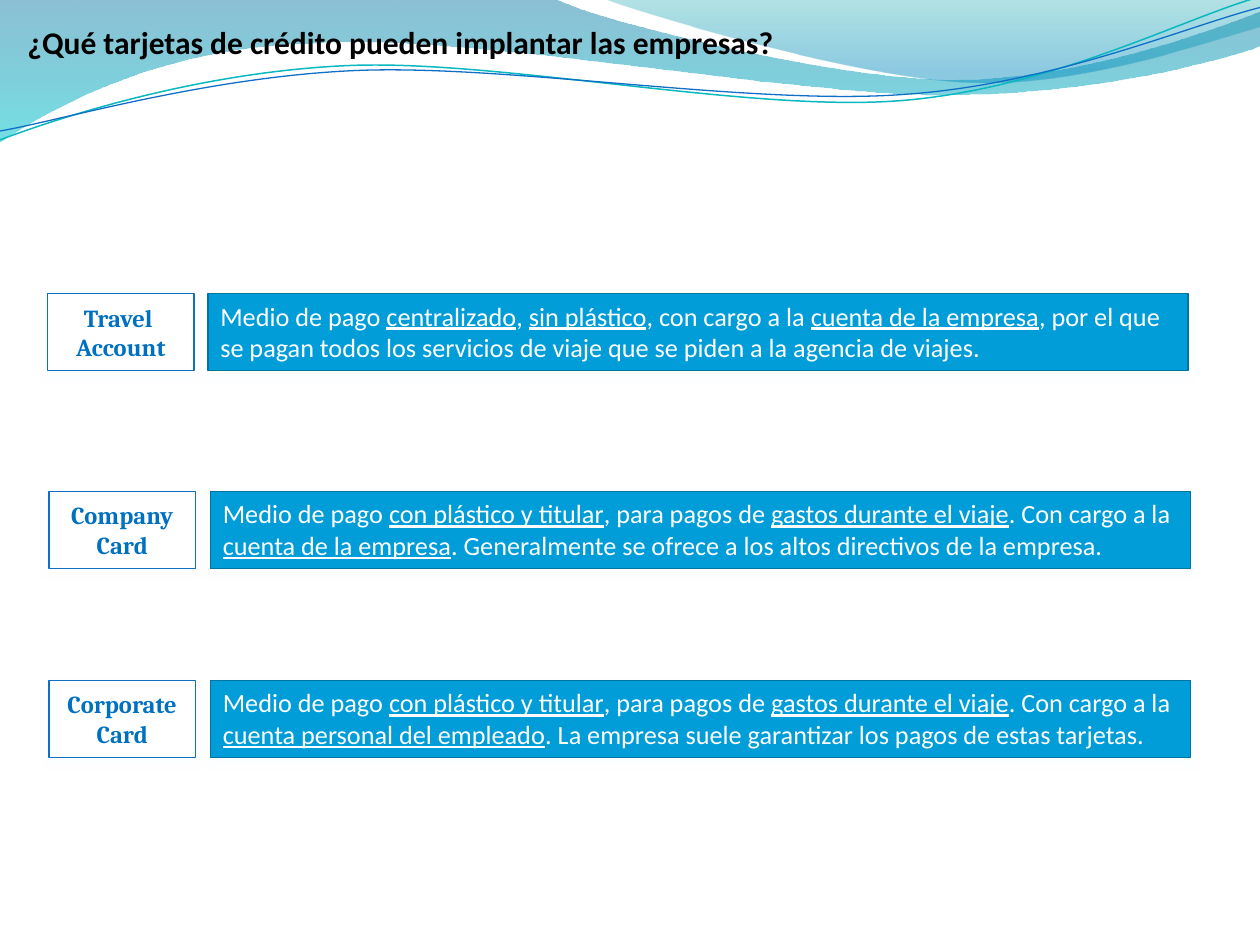
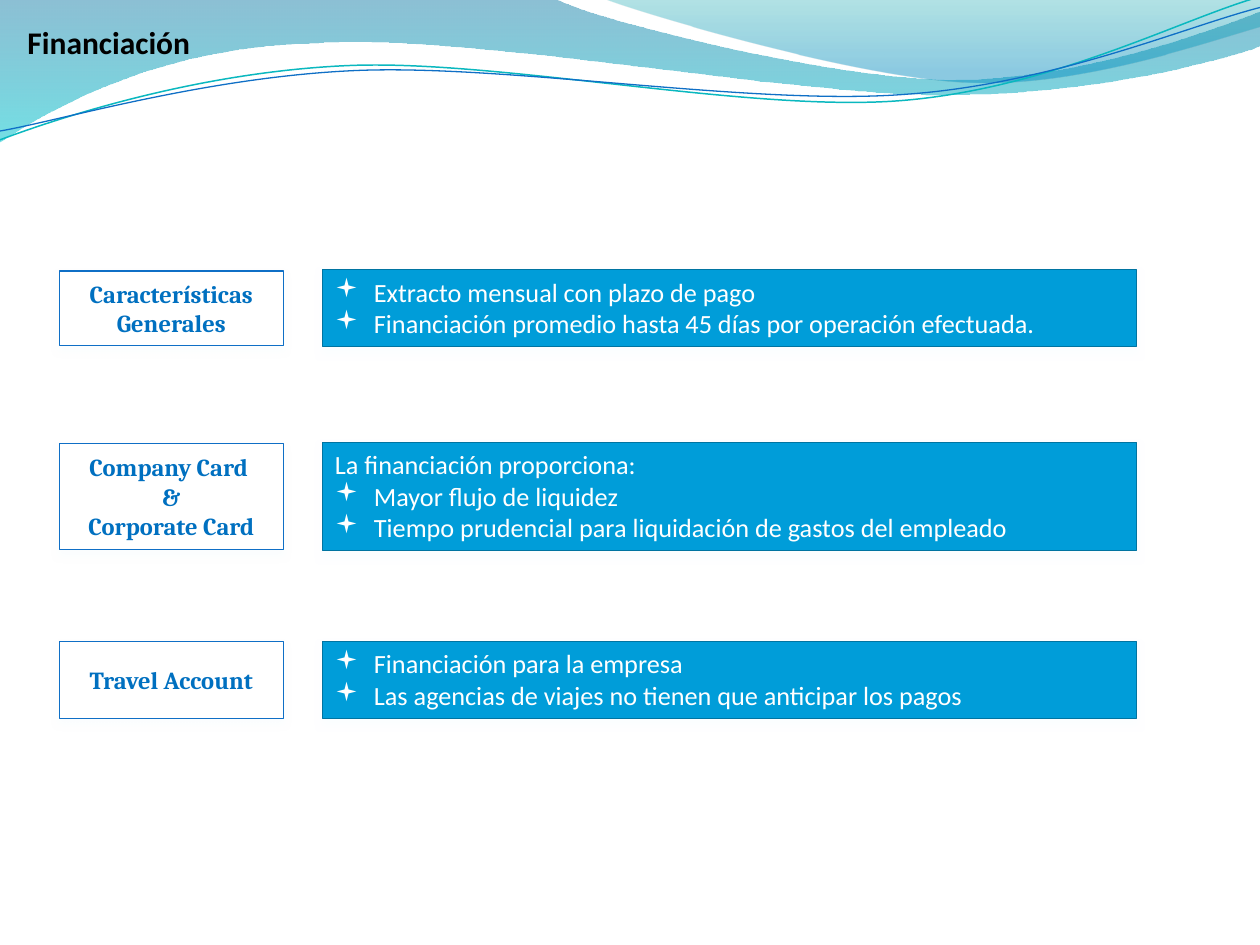
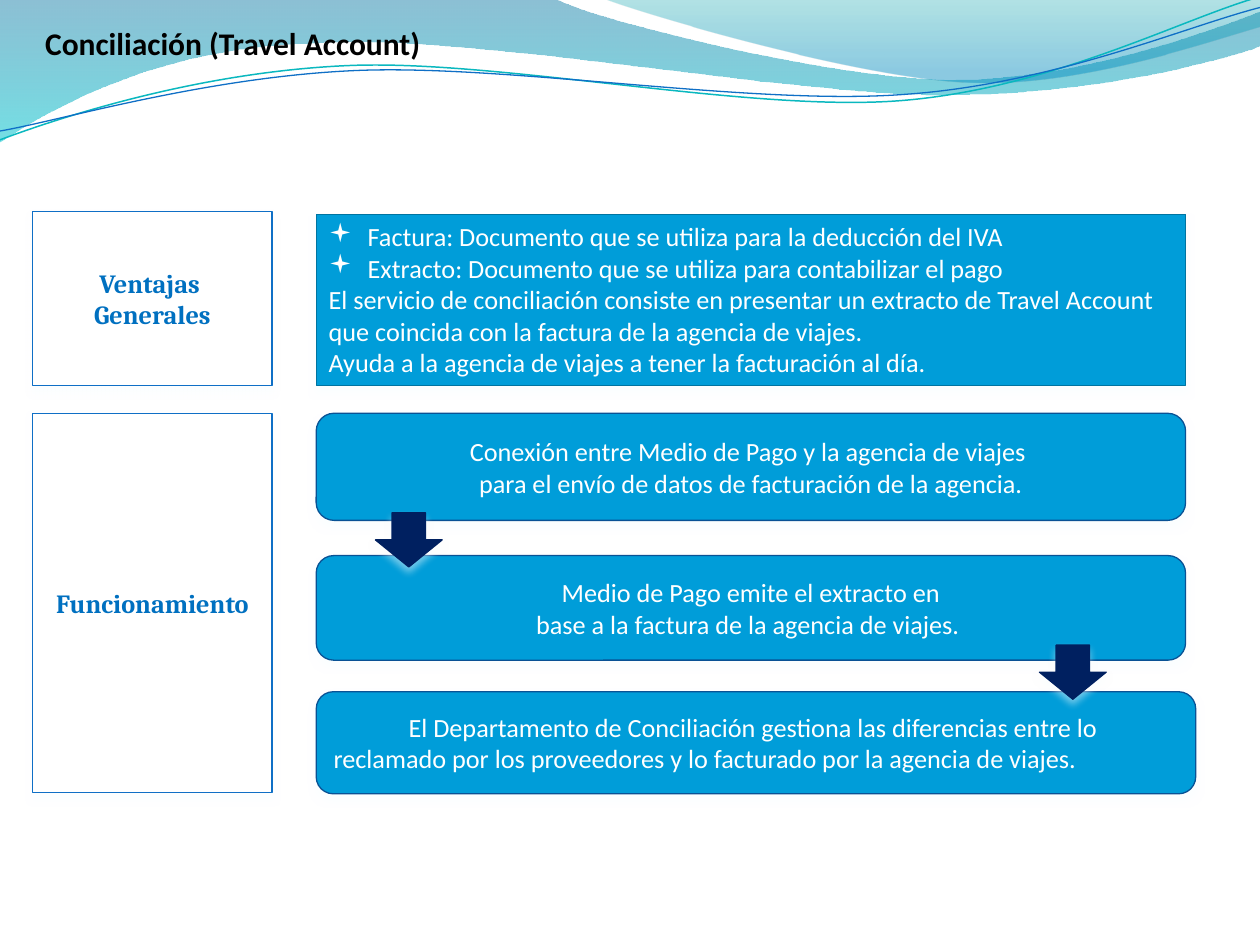
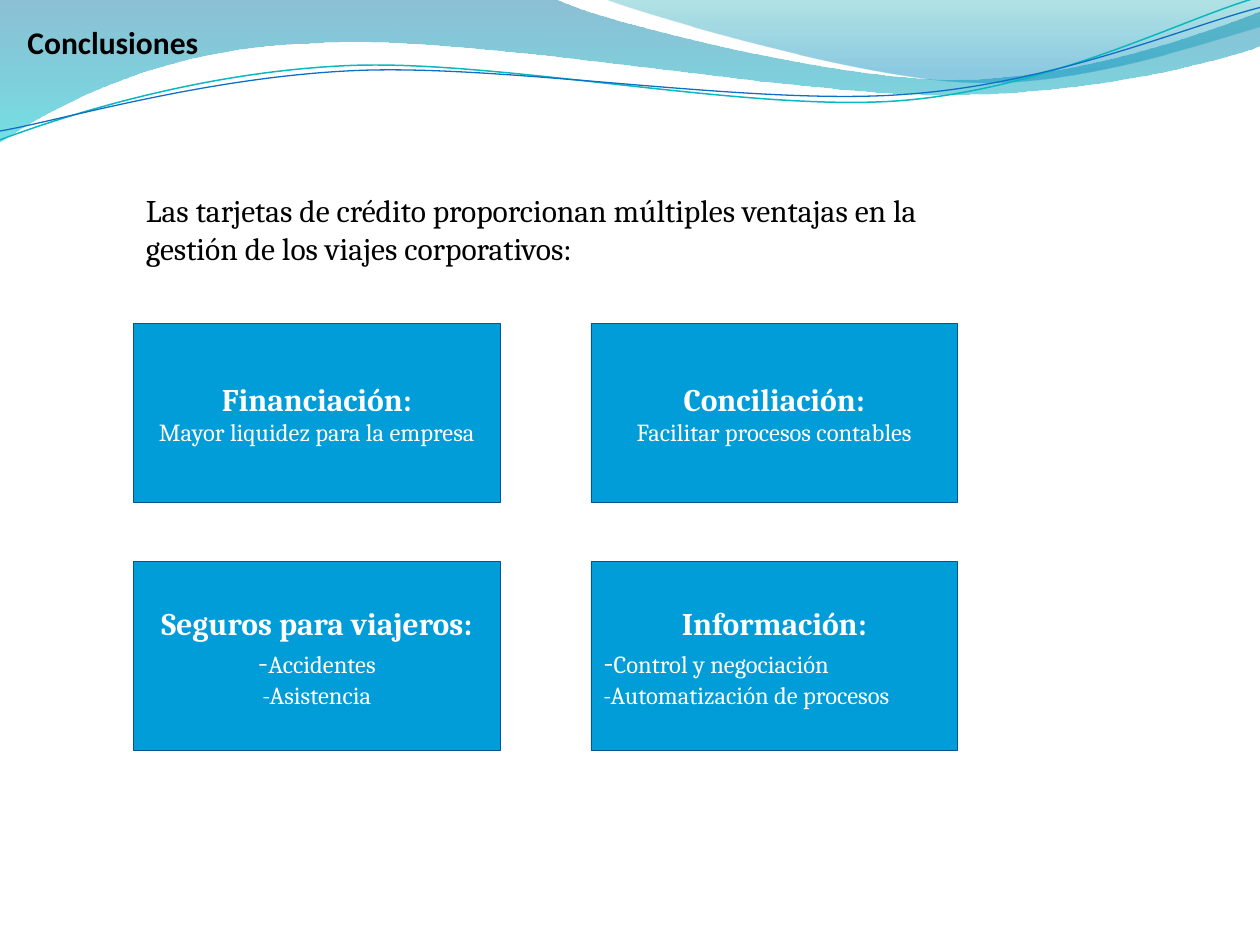
from dataclasses import dataclass
from math import cos, radians, sin
from typing import NamedTuple, Optional

from lxml.etree import SubElement
from pptx import Presentation
from pptx.dml.color import RGBColor
from pptx.enum.shapes import MSO_SHAPE
from pptx.enum.text import MSO_ANCHOR, MSO_AUTO_SIZE, PP_ALIGN
from pptx.oxml.ns import qn
from pptx.util import Emu, Pt

PX = 9144  # one px is a hundredth of an inch
WAVE_TILT = 357.3

COLORS = {
    "black": "000000", "white": "FFFFFF", "blue": "009DD9", "label": "0070C0",
    "label_edge": "0F6FC6", "body_edge": "0074A1", "step_edge": "095295",
    "card_edge": "0B5292", "navy": "002060", "shadow": "F7FDFF",
    "teal": "0AB8BF", "sea": "00C6CF", "green": "00A1A9", "lagoon": "008BBF",
}

FONTS = {
    "title": {"name": "Calibri", "size": Pt(18), "bold": True},
    "body": {"name": "Calibri", "size": Pt(15)},
    "label": {"name": "Cambria", "size": Pt(14), "bold": True},
    "big_label": {"name": "Cambria", "size": Pt(15), "bold": True},
    "intro": {"name": "Cambria", "size": Pt(18)},
    "card": {"name": "Cambria", "size": Pt(14)},
}
HEADING = {"size": Pt(18), "bold": True}
BIG = {"size": Pt(18)}


class Rect(NamedTuple):
    left: int
    top: int
    width: int
    height: int


class Run(NamedTuple):
    text: str
    fmt: dict = {}


class Line(NamedTuple):
    runs: tuple
    centered: bool = False
    bullet: bool = False


class Pair(NamedTuple):
    """A label box and the body box beside it."""
    top: int
    height: int
    label: list
    body: list
    label_span: Optional[tuple] = None  # top and height, when not those of the body


class Columns(NamedTuple):
    label_left: int
    label_width: int
    body_left: int
    body_width: int


class Wave(NamedTuple):
    start: tuple
    segments: list
    stops: tuple = ()
    line: tuple = ()
    center: Optional[tuple] = None


@dataclass(frozen=True)
class Style:
    font: str
    color: str
    fill: Optional[str] = None
    edge: Optional[str] = None
    edge_width: float = 0.75
    shadow: bool = True
    middle: bool = True
    grow: bool = False
    wrap: bool = True
    shape: MSO_SHAPE = MSO_SHAPE.RECTANGLE


TITLE = Style("title", "black", middle=False, grow=True, wrap=False)
INTRO = Style("intro", "black", middle=False, grow=True)
LABEL = Style("label", "label", "white", "label_edge")
BIG_LABEL = Style("big_label", "label", "white", "label_edge")
BODY = Style("body", "white", "blue", "body_edge", middle=False, grow=True)
STEP = Style("body", "white", "blue", "step_edge", shape=MSO_SHAPE.ROUNDED_RECTANGLE)
CARD = Style("card", "white", "blue", "card_edge", 0.5, shadow=False)
ARROW = Style("body", "white", "navy", "navy", shape=MSO_SHAPE.DOWN_ARROW)

# Header band, segments are lines (one point) or curves (three points)
WAVES = [
    Wave((0, 0), [
        [(440, -1)],
        [(476, 17), (664, 63), (758, 63)], [(853, 63), (958, 26), (1000, 9)],
        [(1001, 36)],
        [(983, 44), (870, 76), (746, 75)], [(622, 75), (382, 28), (257, 34)],
        [(129, 36), (46, 83), (-1, 113)],
    ], stops=((0, "body_edge", 45), (1, "sea", 55))),
    Wave((479, -1), [
        [(509, 11), (682, 62), (769, 65)], [(856, 69), (961, 32), (1000, 21)],
        [(1000, 0)],
    ], stops=((0, "green", 30), (0.8, "lagoon", 45))),
    Wave((0, 111), [
        [(48, 93), (158, 57), (277, 52)], [(395, 47), (593, 89), (713, 80)],
        [(833, 71), (938, 15), (998, -2)],
    ], line=("teal", 0.85), center=(499, 57)),
    Wave((0, 104), [
        [(47, 96), (164, 61), (283, 56)], [(403, 51), (597, 84), (717, 75)],
        [(836, 67), (941, 21), (1000, 6)],
    ], line=("label_edge", 0.75), center=(500, 59)),
]


def rgb(name: str) -> RGBColor:
    return RGBColor.from_string(COLORS[name])


def centered(*texts: str) -> list:
    return [Line((Run(t),), centered=True) for t in texts]


def plain(*texts: str) -> list:
    return [Line((Run(t),)) for t in texts]


def bullets(*texts: str) -> list:
    return [Line((Run(t),), bullet=True) for t in texts]


def marked(text: str) -> list:
    """One paragraph; the parts between underscores are underlined."""
    return [Line(tuple(Run(part, {"underline": True} if i % 2 else {})
                       for i, part in enumerate(text.split("_"))))]


def card(heading: str, *lines: Line) -> list:
    return [Line((Run(heading, HEADING),), centered=True), *lines]


def dashed(first: str, second: str, is_centered: bool) -> list:
    return [Line((Run("-", BIG), Run(first)), is_centered),
            Line((Run("-" + second),), is_centered)]


def add_alpha(color, percent: int) -> None:
    SubElement(color, qn("a:alpha")).set("val", str(percent * 1000))


def add_shadow(sp) -> None:
    effects = sp.element.spPr.find(qn("a:effectLst"))
    shadow = SubElement(effects, qn("a:outerShdw"), blurRad=str(Pt(4.5)),
                        dist=str(Pt(3)), dir="5400000", rotWithShape="0")
    add_alpha(SubElement(shadow, qn("a:srgbClr"), val=COLORS["shadow"]), 48)


def add_bullet(p) -> None:
    pPr = p._p.get_or_add_pPr()
    pPr.set("marL", str(31 * PX))
    pPr.set("indent", str(-31 * PX))
    SubElement(pPr, qn("a:buFont"), typeface="Wingdings", charset="2")
    SubElement(pPr, qn("a:buChar"), char="▪")


def write(tf, lines: list, style: Style) -> None:
    for i, line in enumerate(lines):
        p = tf.add_paragraph() if i else tf.paragraphs[0]
        p.alignment = PP_ALIGN.CENTER if line.centered else PP_ALIGN.LEFT
        if line.bullet:
            add_bullet(p)
        for run in line.runs:
            r = p.add_run()
            r.text = run.text
            for key, value in {**FONTS[style.font], **run.fmt}.items():
                setattr(r.font, key, value)
            r.font.color.rgb = rgb(style.color)


def add_box(slide, rect: Rect, style: Style, lines: list = ()) -> None:
    place = [Emu(v * PX) for v in rect]
    if style.fill:
        sp = slide.shapes.add_shape(style.shape, *place)
        sp.fill.solid()
        sp.fill.fore_color.rgb = rgb(style.fill)
        sp.line.color.rgb = rgb(style.edge)
        sp.line.width = Pt(style.edge_width)
        sp.shadow.inherit = False
        if style.shadow:
            add_shadow(sp)
    else:
        sp = slide.shapes.add_textbox(*place)
    tf = sp.text_frame
    frame = {
        "word_wrap": style.wrap,
        "vertical_anchor": MSO_ANCHOR.MIDDLE if style.middle else MSO_ANCHOR.TOP,
        "auto_size": MSO_AUTO_SIZE.SHAPE_TO_FIT_TEXT if style.grow else MSO_AUTO_SIZE.NONE,
    }
    for key, value in frame.items():
        setattr(tf, key, value)
    write(tf, lines, style)


def outline(wave: Wave) -> list:
    """Points of the wave, turned back by its tilt when it has a centre."""
    points = [wave.start] + [point for seg in wave.segments for point in seg]
    if wave.center:
        cx, cy = wave.center
        c, s = cos(radians(-WAVE_TILT)), sin(radians(-WAVE_TILT))
        points = [(cx + (x - cx) * c - (y - cy) * s, cy + (x - cx) * s + (y - cy) * c)
                  for x, y in points]
    return [(round(x * PX), round(y * PX)) for x, y in points]


def bend(sp, segments: list) -> None:
    """Join the three lines of each curved segment into one Bézier curve."""
    lines = iter(list(sp.element.spPr.iter(qn("a:lnTo"))))
    for seg in segments:
        first, *others = [next(lines) for _ in seg]
        if others:
            first.tag = qn("a:cubicBezTo")
            for other in others:
                first.append(other[0])
                other.getparent().remove(other)


def add_wave(slide, wave: Wave) -> None:
    first, *rest = outline(wave)
    builder = slide.shapes.build_freeform(*first, scale=1.0)
    builder.add_line_segments(rest, close=False)
    sp = builder.convert_to_shape()
    bend(sp, wave.segments)
    sp.shadow.inherit = False
    if wave.stops:
        sp.fill.gradient()
        sp.fill.gradient_angle = 270
        for stop, (position, color, _) in zip(sp.fill.gradient_stops, wave.stops):
            stop.position = position
            stop.color.rgb = rgb(color)
        for clr, (_, _, alpha) in zip(sp.element.spPr.iter(qn("a:srgbClr")), wave.stops):
            add_alpha(clr, alpha)
        sp.line.fill.background()
    else:
        color, width = wave.line
        sp.fill.background()
        sp.line.color.rgb = rgb(color)
        sp.line.width = Pt(width)
        sp.rotation = WAVE_TILT


def add_slide(prs, title: str, width: int, left: int = 12, top: int = 13):
    slide = prs.slides.add_slide(prs.slide_layouts[6])
    for wave in WAVES:
        add_wave(slide, wave)
    add_box(slide, Rect(left, top, width, 40), TITLE, plain(title))
    return slide


def add_pairs(slide, cols: Columns, pairs: list, label_style: Style = LABEL) -> None:
    for pair in pairs:
        add_box(slide, Rect(cols.body_left, pair.top, cols.body_width, pair.height),
                BODY, pair.body)
        top, height = pair.label_span or (pair.top, pair.height)
        add_box(slide, Rect(cols.label_left, top, cols.label_width, height),
                label_style, pair.label)


def cards_slide(prs) -> None:
    slide = add_slide(prs, "¿Qué tarjetas de crédito pueden implantar las empresas?", 617)
    plastic = ("Medio de pago _con plástico y titular_, para pagos de "
               "_gastos durante el viaje_. Con cargo a la ")
    add_pairs(slide, Columns(38, 116, 165, 778), [
        Pair(233, 61, centered("Travel ", "Account"), marked(
            "Medio de pago _centralizado_, _sin plástico_, con cargo a la "
            "_cuenta de la empresa_, por el que se pagan todos los servicios de viaje "
            "que se piden a la agencia de viajes.")),
    ])
    add_pairs(slide, Columns(39, 116, 167, 778), [
        Pair(390, 61, centered("Company", "Card"), marked(
            plastic + "_cuenta de la empresa_. Generalmente se ofrece a los altos "
            "directivos de la empresa.")),
        Pair(540, 61, centered("Corporate", "Card"), marked(
            plastic + "_cuenta personal del empleado_. La empresa suele garantizar "
            "los pagos de estas tarjetas.")),
    ])


def financing_slide(prs) -> None:
    slide = add_slide(prs, "Financiación", 156)
    add_pairs(slide, Columns(47, 178, 256, 646), [
        Pair(214, 61, centered("Características", "Generales"), bullets(
            "Extracto mensual con plazo de pago",
            "Financiación promedio hasta 45 días por operación efectuada."), (215, 59)),
        Pair(351, 86, centered("Company Card ", "&", "Corporate Card"),
             plain("La financiación proporciona:") + bullets(
                 "Mayor flujo de liquidez",
                 "Tiempo prudencial para liquidación de gastos del empleado"), (352, 84)),
        Pair(509, 61, centered("Travel Account"), bullets(
            "Financiación para la empresa",
            "Las agencias de viajes no tienen que anticipar los pagos")),
    ])


def reconciliation_slide(prs) -> None:
    slide = add_slide(prs, "Conciliación (Travel Account)", 320, 26, 14)
    cols = Columns(26, 190, 251, 690)
    add_pairs(slide, cols, [
        Pair(170, 136, centered("Ventajas ", "Generales"), bullets(
            "Factura: Documento que se utiliza para la deducción del IVA",
            "Extracto: Documento que se utiliza para contabilizar el pago",
        ) + plain(
            "El servicio de conciliación consiste en presentar un extracto de Travel "
            "Account que coincida con la factura de la agencia de viajes.",
            "Ayuda a la agencia de viajes a tener la facturación al día."), (168, 138)),
    ], BIG_LABEL)

    # Process steps and the arrows between them
    add_box(slide, Rect(cols.label_left, 328, cols.label_width, 301), BIG_LABEL,
            centered("Funcionamiento"))
    steps = [
        (328, 690, 85, centered("Conexión entre Medio de Pago y la agencia de viajes ",
                                "para el envío de datos de facturación de la agencia.")),
        (441, 690, 83, centered("Medio de Pago emite el extracto en",
                                "base a la factura de la agencia de viajes. ")),
        (549, 698, 81,
         centered("El Departamento de Conciliación gestiona las diferencias entre lo ")
         + plain("reclamado por los proveedores y lo facturado por la agencia de viajes.")),
    ]
    for top, width, height, lines in steps:
        add_box(slide, Rect(cols.body_left, top, width, height), STEP, lines)
    for left, top in ((298, 407), (825, 512)):
        add_box(slide, Rect(left, top, 53, 43), ARROW)


def conclusions_slide(prs) -> None:
    slide = add_slide(prs, "Conclusiones", 156)
    add_box(slide, Rect(106, 147, 701, 71), INTRO, plain(
        "Las tarjetas de crédito proporcionan múltiples ventajas en la",
        "gestión de los viajes corporativos:"))
    grid = [
        (257, 142, [card("Financiación:", *centered("Mayor liquidez para la empresa")),
                    card("Conciliación:", *centered("Facilitar procesos contables"))]),
        (446, 150, [card("Seguros para viajeros:", *dashed("Accidentes", "Asistencia", True)),
                    card("Información:", *dashed("Control y negociación",
                                                 "Automatización de procesos", False))]),
    ]
    for top, height, row in grid:
        for left, lines in zip((106, 469), row):
            add_box(slide, Rect(left, top, 291, height), CARD, lines)


def main() -> None:
    prs = Presentation()
    prs.slide_width, prs.slide_height = Emu(1000 * PX), Emu(750 * PX)
    for build in (cards_slide, financing_slide, reconciliation_slide, conclusions_slide):
        build(prs)
    prs.save("out.pptx")


if __name__ == "__main__":
    main()
